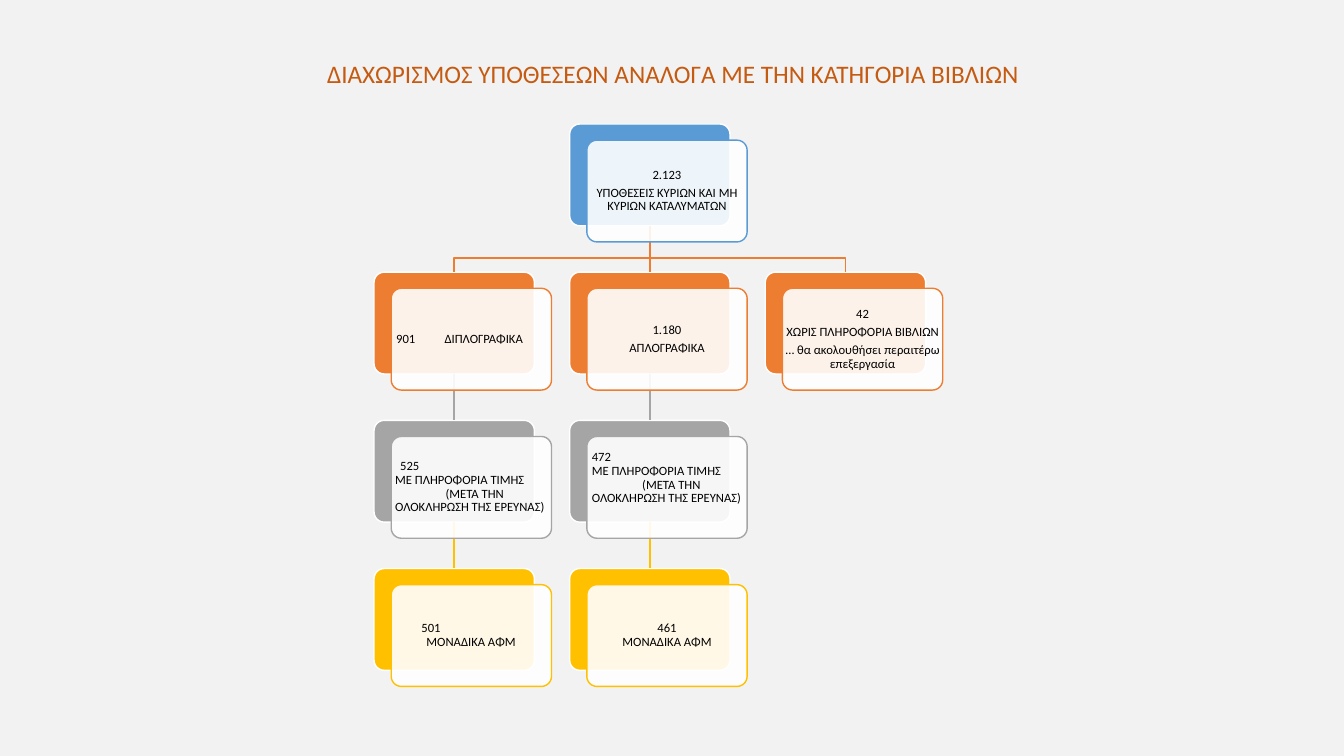
import dataclasses

import lxml.etree
import pptx
import pptx.dml.color
import pptx.enum.shapes
import pptx.enum.text
import pptx.oxml.ns
import pptx.util

Inches = pptx.util.Inches
Pt = pptx.util.Pt
ALIGN = pptx.enum.text.PP_ALIGN

LEFT, TOP = 3.71, 1.23
COLUMN_STEP, ROW_STEP = 1.94, 1.47
CARD_WIDTH, CARD_HEIGHT = 1.59, 1.01
PANEL_SHIFT_X, PANEL_SHIFT_Y = 0.17, 0.16
ELBOW_DROP = 0.32
ROW_COLORS = ["5B9BD5", "ED7D31", "A5A5A5", "FFC000"]
PRICE_INFO = "\vΜΕ ΠΛΗΡΟΦΟΡΙΑ ΤΙΜΗΣ\v\t(ΜΕΤΑ ΤΗΝ\vΟΛΟΚΛΗΡΩΣΗ ΤΗΣ ΕΡΕΥΝΑΣ)"


@dataclasses.dataclass
class Node:
    """A card; margin, indent, right_tab and bottom are inches inside its panel."""
    column: int
    row: int
    lines: list
    align: int = ALIGN.CENTER
    margin: float = 0
    indent: float = 0
    right_tab: float = 0
    bottom: float = 0


NODES = [
    Node(1, 0, ["2.123", "ΥΠΟΘΕΣΕΙΣ ΚΥΡΙΩΝ ΚΑΙ ΜΗ ΚΥΡΙΩΝ ΚΑΤΑΛΥΜΑΤΩΝ"]),
    Node(0, 1, ["901\tΔΙΠΛΟΓΡΑΦΙΚΑ"], ALIGN.LEFT, indent=0.02, right_tab=1.5),
    Node(0, 2, ["525" + PRICE_INFO], ALIGN.LEFT, margin=0.01, indent=0.05, right_tab=1.3),
    Node(0, 3, ["501\vΜΟΝΑΔΙΚΑ ΑΦΜ"], ALIGN.LEFT, margin=0.32, indent=-0.05),
    Node(1, 1, ["1.180", "ΑΠΛΟΓΡΑΦΙΚΑ"]),
    Node(1, 2, ["472" + PRICE_INFO], ALIGN.LEFT, margin=0.02, right_tab=1.3, bottom=0.18),
    Node(1, 3, ["461\vΜΟΝΑΔΙΚΑ ΑΦΜ"]),
    Node(2, 1, ["42", "ΧΩΡΙΣ ΠΛΗΡΟΦΟΡΙΑ ΒΙΒΛΙΩΝ", "… θα ακολουθήσει περαιτέρω επεξεργασία"]),
]
STRAIGHT_LINKS = [((1, 0), (1, 1)), ((0, 1), (0, 2)), ((0, 2), (0, 3)),
                  ((1, 1), (1, 2)), ((1, 2), (1, 3))]
ELBOW_LINKS = [((1, 0), (0, 1)), ((1, 0), (2, 1))]


def color(hex_code):
    return pptx.dml.color.RGBColor.from_string(hex_code)


def add_element(parent, tag, **attributes):
    element = lxml.etree.SubElement(parent, pptx.oxml.ns.qn(tag))
    for name, value in attributes.items():
        element.set(name, str(value))
    return element


def style_line(shape, hex_code):
    shape.line.color.rgb = color(hex_code)
    shape.line.width = Pt(1)


def add_card(page, left, top, fill, outline):
    card = page.shapes.add_shape(
        pptx.enum.shapes.MSO_SHAPE.ROUNDED_RECTANGLE,
        Inches(left), Inches(top), Inches(CARD_WIDTH), Inches(CARD_HEIGHT))
    card.adjustments[0] = 0.1
    card.shadow.inherit = False
    card.fill.solid()
    card.fill.fore_color.rgb = color(fill)
    style_line(card, outline)
    return card


def add_panel(page, node, left, top):
    """Place the translucent front card with the node's text."""
    panel = add_card(page, left, top, "FFFFFF", ROW_COLORS[node.row])
    white = panel.fill._xPr.find(".//" + pptx.oxml.ns.qn("a:srgbClr"))
    add_element(white, "a:alpha", val=90000)
    frame = panel.text_frame
    frame.word_wrap = True
    frame.vertical_anchor = pptx.enum.text.MSO_ANCHOR.MIDDLE
    frame.margin_left = frame.margin_right = frame.margin_top = 0
    frame.margin_bottom = Inches(node.bottom)
    for index, line in enumerate(node.lines):
        para = frame.add_paragraph() if index else frame.paragraphs[0]
        para.text = line
        para.alignment = node.align
        para.line_spacing = 0.9
        para.space_after = Pt(3.15)
        properties = para._p.get_or_add_pPr()
        properties.set("marL", str(Inches(node.margin)))
        properties.set("indent", str(Inches(node.indent)))
        if node.right_tab:
            tabs = add_element(properties, "a:tabLst")
            add_element(tabs, "a:tab", pos=Inches(node.right_tab), algn="r")
        para.font.name = "Calibri"
        para.font.size = Pt(9)
        para.font.color.rgb = color("000000")


def add_straight_link(page, parent, child, hex_code):
    link = page.shapes.add_connector(pptx.enum.shapes.MSO_CONNECTOR.STRAIGHT, 0, 0, 0, 0)
    link.begin_connect(parent, 2)
    link.end_connect(child, 0)
    style_line(link, hex_code)
    add_element(link._element.spPr, "a:effectLst")


def add_elbow_link(page, parent, child, hex_code):
    start_x, end_x = (card.left + card.width // 2 for card in (parent, child))
    start_y = parent.top + parent.height
    bend_y = start_y + Inches(ELBOW_DROP)
    builder = page.shapes.build_freeform(start_x, start_y)
    builder.add_line_segments(
        [(start_x, bend_y), (end_x, bend_y), (end_x, child.top)], close=False)
    link = builder.convert_to_shape()
    link.shadow.inherit = False
    link.fill.background()
    style_line(link, hex_code)


def add_tree(page, left, top):
    places = {(node.column, node.row): (left + node.column * COLUMN_STEP,
                                        top + node.row * ROW_STEP) for node in NODES}
    backs = {key: add_card(page, *place, ROW_COLORS[key[1]], "FFFFFF")
             for key, place in places.items()}
    for links, add_link in ((ELBOW_LINKS, add_elbow_link),
                            (STRAIGHT_LINKS, add_straight_link)):
        for parent, child in links:
            add_link(page, backs[parent], backs[child], ROW_COLORS[child[1]])
    for node in NODES:
        x, y = places[node.column, node.row]
        add_panel(page, node, x + PANEL_SHIFT_X, y + PANEL_SHIFT_Y)


def add_title(page, left, top, width, height):
    box = page.shapes.add_textbox(Inches(left), Inches(top), Inches(width), Inches(height))
    box.text_frame.word_wrap = True
    para = box.text_frame.paragraphs[0]
    para.text = "ΔΙΑΧΩΡΙΣΜΟΣ ΥΠΟΘΕΣΕΩΝ ΑΝΑΛΟΓΑ ΜΕ ΤΗΝ ΚΑΤΗΓΟΡΙΑ ΒΙΒΛΙΩΝ"
    para.alignment = ALIGN.CENTER
    para.font.name = "Calibri"
    para.font.size = Pt(18)
    para.font.color.rgb = color("C55A11")


def main():
    deck = pptx.Presentation()
    deck.slide_width, deck.slide_height = Inches(13.33), Inches(7.5)
    page = deck.slides.add_slide(deck.slide_layouts[6])
    page.background.fill.solid()
    page.background.fill.fore_color.rgb = color("F2F2F2")
    add_tree(page, LEFT, TOP)
    add_title(page, 0.72, 0.53, 11.91, 0.4)
    deck.save("out.pptx")


if __name__ == "__main__":
    main()
